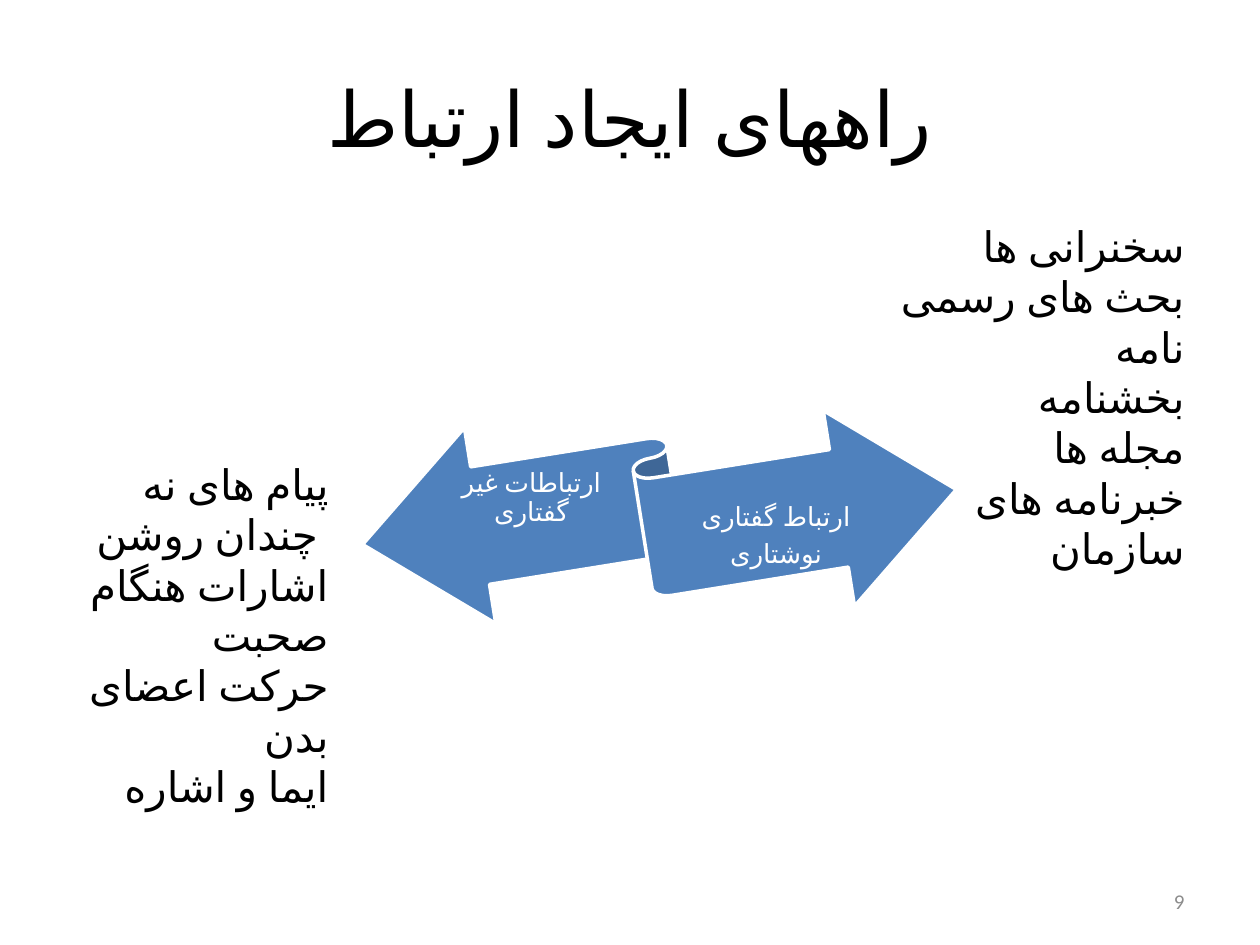
from pptx import Presentation
from pptx import util as u
from pptx.dml.color import RGBColor
from pptx.enum import lang, shapes, text

PX = 914400 / 126
COLORS = {"black": "000000", "white": "FFFFFF", "blue": "4F81BD", "gray": "8C8C8C"}
AL, AN = text.PP_ALIGN, text.MSO_ANCHOR


def place(sp, box):
    for name, v in zip(("left", "top", "width", "height"), box):
        setattr(sp, name, u.Emu(round(v * PX)))


def write(sp, lines, size, font, color, align, para={}, frame={}):
    tf = sp.text_frame
    tf.word_wrap = True
    for name, v in frame.items():
        setattr(tf, name, v)
    look = {"size": u.Pt(size), "name": font, "language_id": lang.MSO_LANGUAGE_ID.FARSI}
    for i, line in enumerate(lines):
        p = tf.paragraphs[0] if i == 0 else tf.add_paragraph()
        for name, v in {"alignment": align, **para}.items():
            setattr(p, name, v)
        r = p.add_run()
        r.text = line
        for name, v in look.items():
            setattr(r.font, name, v)
        r.font.color.rgb = RGBColor.from_string(COLORS[color])


prs = Presentation()
prs.slide_width, prs.slide_height = u.Inches(10), u.Inches(7.5)
s = prs.slides.add_slide(prs.slide_layouts[5])

middle = {"vertical_anchor": AN.MIDDLE}
place(s.shapes.title, (63, 38, 1134, 157))
write(s.shapes.title, ["راههای ایجاد ارتباط"], 44, "Calibri", "black", AL.CENTER, frame=middle)

ribbon = s.shapes.add_shape(shapes.MSO_SHAPE.LEFT_RIGHT_RIBBON, 0, 0, 0, 0)
place(ribbon, (362, 398, 595, 238))
ribbon.rotation = 350.9
ribbon.shadow.inherit = False
ribbon.fill.solid()
ribbon.fill.fore_color.rgb = RGBColor.from_string(COLORS["blue"])
ribbon.line.color.rgb = RGBColor.from_string(COLORS["white"])
ribbon.line.width = u.Pt(2)

label_para = {"line_spacing": 0.9, "space_after": u.Pt(5)}
label_frame = {**middle, "margin_left": 0, "margin_right": 0,
               "margin_top": u.Inches(0.06), "margin_bottom": u.Inches(0.06)}
grow = {"auto_size": text.MSO_AUTO_SIZE.SHAPE_TO_FIT_TEXT}

boxes = [
    ((433, 440, 197, 117), ["ارتباطات غیر گفتاری"],
     15, "Calibri", "white", AL.CENTER, label_para, label_frame),
    ((660, 478, 232, 117), ["ارتباط گفتاری", "نوشتاری"],
     15, "Calibri", "white", AL.CENTER, label_para, label_frame),
    ((903, 876, 294, 50), ["9"], 12, "Calibri", "gray", AL.RIGHT, {}, middle),
    ((878, 214, 319, 420),
     ["سخنرانی ها", "بحث های رسمی", "نامه", "بخشنامه", "مجله ها", "خبرنامه های سازمان"],
     24, "Arial", "black", AL.RIGHT, {}, grow),
    ((44, 452, 297, 369),
     ["پیام های نه چندان روشن ", "اشارات هنگام صحبت", "حرکت اعضای بدن", "ایما و اشاره"],
     24, "Arial", "black", AL.RIGHT, {}, grow),
]
for box, *content in boxes:
    sp = s.shapes.add_textbox(0, 0, 0, 0)
    place(sp, box)
    write(sp, *content)

prs.save("out.pptx")
